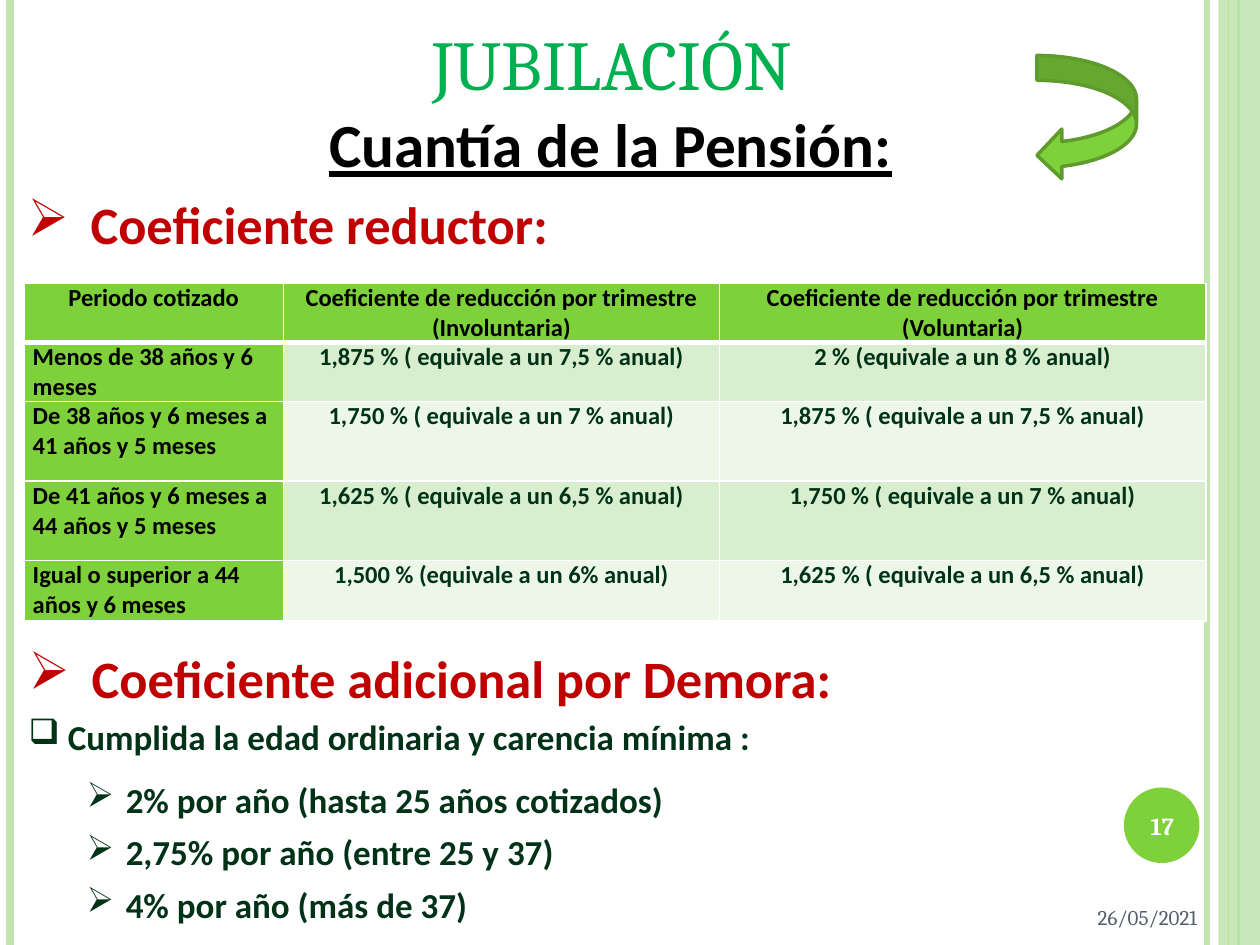
import lxml.etree
import pptx
import pptx.dml.color
import pptx.enum.shapes
import pptx.enum.text
import pptx.oxml
import pptx.oxml.ns
import pptx.util

SHAPE = pptx.enum.shapes.MSO_SHAPE
ALIGN = pptx.enum.text.PP_ALIGN
ANCHOR = pptx.enum.text.MSO_ANCHOR
qn = pptx.oxml.ns.qn
GREEN, PALE, RED, DARK = "7FD13B", "C0E5AF", "C00000", "003217"

deck = pptx.Presentation()
deck.slide_width = pptx.util.Inches(10)
deck.slide_height = pptx.util.Inches(7.5)
page = deck.slides.add_slide(deck.slide_layouts[5])

# The page is a grid of 100 columns by 75 rows
COLUMN, ROW = deck.slide_width / 100, deck.slide_height / 75


def grid(left, top, width, height):
    return int(left * COLUMN), int(top * ROW), int(width * COLUMN), int(height * ROW)


def paint(code):
    return pptx.dml.color.RGBColor.from_string(code)


# Side bands: vertical rules, then the wide translucent strip
for x, code, weight in [(95.8, PALE, 3), (0.8, PALE, 4.5), (98.3, GREEN, 1.5),
                        (97.5, GREEN, 0.75)]:
    left, top, right, bottom = grid(x, 0, x, 75)
    rule = page.shapes.add_connector(
        pptx.enum.shapes.MSO_CONNECTOR.STRAIGHT, left, top, right, bottom)
    rule.line.color.rgb = paint(code)
    rule.line.width = pptx.util.Pt(weight)
    lxml.etree.SubElement(rule._element.spPr, qn("a:effectLst"))

# Strip, page number disc and curved arrow
for kind, place, code, edge in [
        (SHAPE.RECTANGLE, (96.7, 0, 3.3, 75), PALE, None),
        (SHAPE.OVAL, (89.2, 62.5, 6, 6), GREEN, None),
        (SHAPE.CURVED_LEFT_ARROW, (82.3, 4.4, 7.9, 9.9), GREEN, "5E9B2C")]:
    shape = page.shapes.add_shape(kind, *grid(*place))
    shape.shadow.inherit = False
    shape.fill.solid()
    shape.fill.fore_color.rgb = paint(code)
    if edge:
        shape.line.color.rgb = paint(edge)
        shape.line.width = pptx.util.Pt(2)
    else:
        shape.line.fill.background()
    if kind == SHAPE.RECTANGLE:
        tint = shape._element.spPr.find(".//" + qn("a:srgbClr"))
        lxml.etree.SubElement(tint, qn("a:alpha"), val="87000")

# Title in small capitals
title = page.shapes.title
title.left, title.top, title.width, title.height = grid(0, -3.5, 97.2, 12.6)
title.text_frame.vertical_anchor = ANCHOR.BOTTOM
para = title.text_frame.paragraphs[0]
para.alignment = ALIGN.CENTER
span = para.add_run()
span.text = "jubilación"
span.font.name, span.font.size = "Cambria", pptx.util.Pt(50)
span.font.color.rgb = paint("00B050")
span._r.get_or_add_rPr().set("cap", "small")

# Text boxes: place, anchor, font, size, colour, bold, alignment,
# lines of (text, bullet, indent in inches, hanging in inches, space after)
boxes = [
    ((74, 70.7, 22, 4.2), ANCHOR.MIDDLE, "Cambria", 12, "575F6D", False, ALIGN.RIGHT,
     [("26/05/2021", None, 0, 0, 0)]),
    ((88.9, 62.7, 6.7, 5.7), ANCHOR.MIDDLE, "Cambria", 14, "FFFFFF", True, ALIGN.CENTER,
     [("17", None, 0, 0, 0)]),
    ((1.2, 7.1, 94.5, 6), ANCHOR.TOP, "Calibri", 35, "000000", True, ALIGN.CENTER,
     [("Cuantía de la Pensión:", None, 0, 0, 10)]),
    ((1.2, 14.7, 94.5, 6.1), ANCHOR.MIDDLE, "Calibri", 30, RED, True, ALIGN.LEFT,
     [("Coeficiente reductor:", "➢", 0.5, 0.5, 0)]),
    ((1.3, 50.7, 94.4, 6.1), ANCHOR.MIDDLE, "Calibri", 30, RED, True, ALIGN.LEFT,
     [("Coeficiente adicional por Demora:", "➢", 0.5, 0.5, 0)]),
    ((1.3, 56.2, 98.7, 17.8), ANCHOR.MIDDLE, "Calibri", 20, DARK, True, ALIGN.LEFT,
     [("Cumplida la edad ordinaria y carencia mínima :", "❑", 0.31, 0.31, 12),
      ("2% por año (hasta 25 años cotizados)", "➢", 0.77, 0.31, 6),
      ("2,75% por año (entre 25 y 37)", "➢", 0.77, 0.31, 6),
      ("4% por año (más de 37)", "➢", 0.77, 0.31, 6)]),
]
for place, anchor, face, size, code, bold, align, lines in boxes:
    frame = page.shapes.add_textbox(*grid(*place)).text_frame
    frame.word_wrap = True
    frame.vertical_anchor = anchor
    for index, (text, bullet, indent, hanging, after) in enumerate(lines):
        para = frame.add_paragraph() if index else frame.paragraphs[0]
        para.text = text
        para.alignment = align
        para.space_after = pptx.util.Pt(after)
        if bullet:
            properties = para._p.get_or_add_pPr()
            properties.set("marL", str(pptx.util.Inches(indent)))
            properties.set("indent", str(-pptx.util.Inches(hanging)))
            lxml.etree.SubElement(properties, qn("a:buChar"), char=bullet)
        para.font.name, para.font.size = face, pptx.util.Pt(size)
        para.font.bold = bold
        para.font.color.rgb = paint(code)
        if size == 35:
            para.font.underline = True
            para.line_spacing = 1.15

# Table of reduction coefficients
rows = [
    ("Periodo cotizado", "Coeficiente de reducción por trimestre (Involuntaria)",
     "Coeficiente de reducción por trimestre\n(Voluntaria)"),
    ("Menos de 38 años y 6 meses", "1,875 % ( equivale a un 7,5 % anual)",
     "2 % (equivale a un 8 % anual)"),
    ("De 38 años y 6 meses a 41 años y 5 meses", "1,750 % ( equivale a un 7 % anual)",
     "1,875 % ( equivale a un 7,5 % anual)"),
    ("De 41 años y 6 meses a 44 años y 5 meses", "1,625 % ( equivale a un 6,5 % anual)",
     "1,750 % ( equivale a un 7 % anual)"),
    ("Igual o superior a 44 años y 6 meses", "1,500 % (equivale a un 6% anual)",
     "1,625 % ( equivale a un 6,5 % anual)"),
]
table = page.shapes.add_table(len(rows), 3, *grid(1.9, 22.5, 93.8, 26.8)).table
for column, share in zip(table.columns, (20.6, 34.6, 38.6)):
    column.width = int(share * COLUMN)
for line, share in zip(table.rows, (4.6, 4.7, 6.3, 6.3, 4.8)):
    line.height = int(share * ROW)

for r, texts in enumerate(rows):
    for c, text in enumerate(texts):
        cell = table.cell(r, c)
        heading = r == 0 or c == 0
        cell.margin_left = cell.margin_right = pptx.util.Inches(0.07)
        cell.margin_top = cell.margin_bottom = 0
        cell.fill.solid()
        cell.fill.fore_color.rgb = paint(GREEN if heading else ("ECF7E8", "D8EECE")[r % 2])
        cell.text_frame.text = text
        for para in cell.text_frame.paragraphs:
            para.alignment = ALIGN.LEFT if c == 0 and r else ALIGN.CENTER
            if not heading:
                para.space_before = pptx.util.Pt(6)
            para.font.name, para.font.size = "Calibri", pptx.util.Pt(14)
            para.font.bold = True
            para.font.color.rgb = paint("000000" if heading else DARK)
        # White borders, heavier between the header and the body
        for order, side in enumerate(("lnL", "lnR", "lnT", "lnB")):
            heavy = (r, side) in ((0, "lnB"), (1, "lnT"))
            border = lxml.etree.Element(qn("a:" + side), w=str(pptx.util.Pt(3 if heavy else 1)))
            fill = lxml.etree.SubElement(border, qn("a:solidFill"))
            lxml.etree.SubElement(fill, qn("a:srgbClr"), val="FFFFFF")
            cell._tc.get_or_add_tcPr().insert(order, border)

deck.save("out.pptx")
